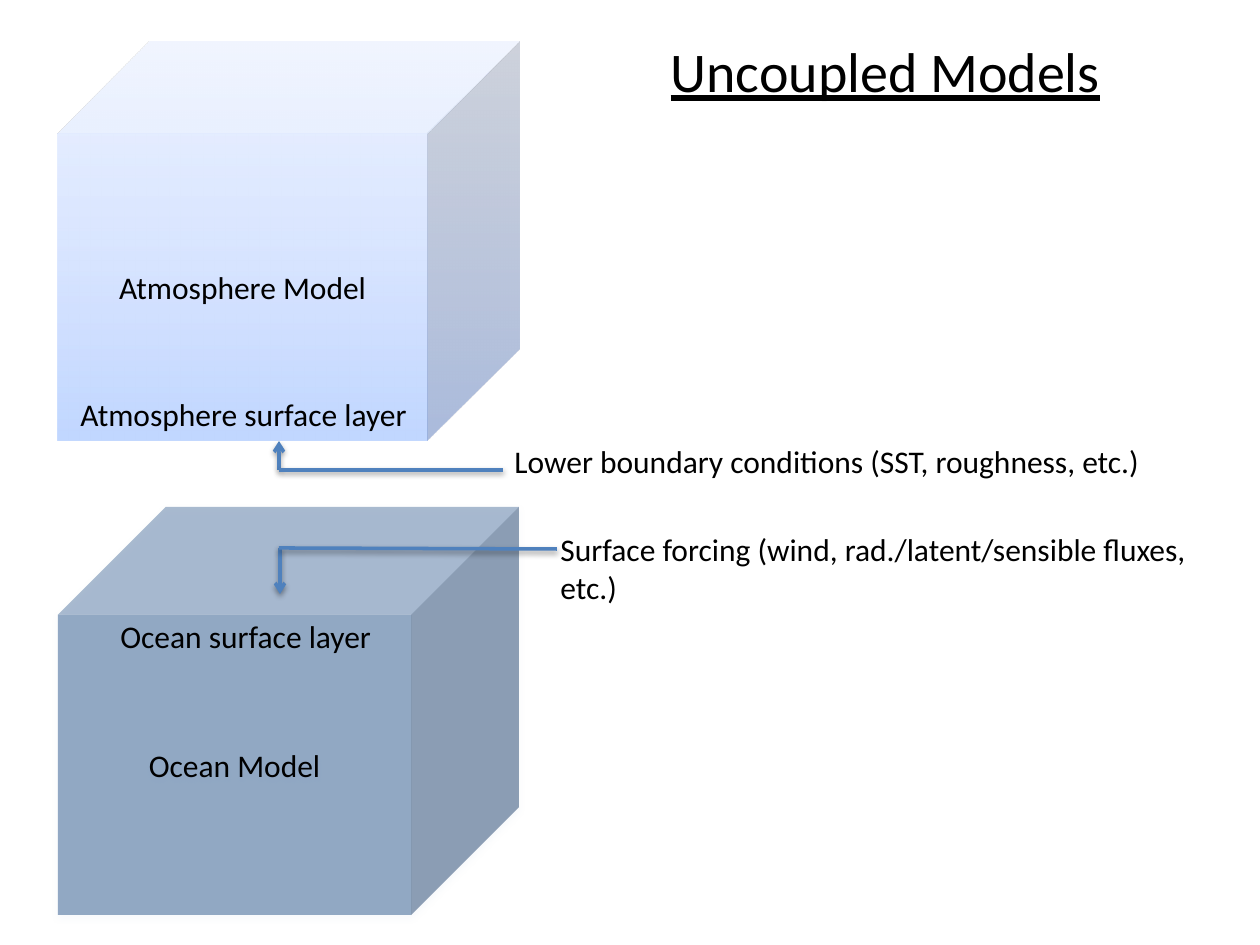
"""Build a slide that contrasts uncoupled atmosphere and ocean models."""
from dataclasses import dataclass

from lxml.etree import SubElement
from pptx import Presentation
from pptx.dml.color import RGBColor
from pptx.enum.shapes import MSO_CONNECTOR as Connector, MSO_SHAPE as Shape
from pptx.enum.text import MSO_ANCHOR as Anchor, MSO_AUTO_SIZE as AutoSize, PP_ALIGN as Align
from pptx.oxml.ns import qn
from pptx.util import Emu, Pt

TITLE_ONLY = 5


@dataclass(frozen=True)
class Theme:
    font: str = "Calibri"
    body_size: int = 18
    title_size: int = 32
    line_width: int = 2
    ink: str = "000000"
    arrow: str = "4F81BD"
    ocean: str = "376092"
    ocean_alpha: int = 53
    ocean_shadow: str = "DCE6F2"
    sky: tuple = ((0, "A4C4FF"), (35, "BFD4FF"), (100, "E6EEFF"))
    sky_alpha: int = 68
    shadow_alpha: int = 38


def px(value):
    return Emu(round(value * 914400 / 126))


def add_node(parent, tag, **attributes):
    return SubElement(parent, qn(tag), {key: str(value) for key, value in attributes.items()})


def add_color(parent, color, alpha):
    node = add_node(parent, "a:srgbClr", val=color)
    add_node(node, "a:alpha", val=alpha * 1000)


def write_text(frame, text, *, font, size, color, align=Align.LEFT, anchor=Anchor.TOP,
               underline=None, grow=True):
    frame.word_wrap = not grow
    frame.auto_size = AutoSize.SHAPE_TO_FIT_TEXT if grow else AutoSize.NONE
    frame.vertical_anchor = anchor
    frame.margin_left = frame.margin_right = Pt(7.2)
    frame.margin_top = frame.margin_bottom = Pt(3.6)
    para = frame.paragraphs[0]
    para.alignment = align
    span = para.add_run()
    span.text = text
    span.font.name, span.font.size = font, Pt(size)
    span.font.color.rgb = RGBColor.from_string(color)
    span.font.underline = underline


class Diagram:
    def __init__(self, page, theme):
        self.page, self.theme = page, theme
        self.style = dict(font=theme.font, size=theme.body_size, color=theme.ink)

    def title(self, text, *bounds):
        box = self.page.shapes.title
        box.left, box.top, box.width, box.height = map(px, bounds)
        write_text(box.text_frame, text, **{**self.style, "size": self.theme.title_size},
                   underline=True)

    def label(self, text, *bounds):
        box = self.page.shapes.add_textbox(*map(px, bounds))
        write_text(box.text_frame, text, **self.style)

    def cube(self, text, bounds, depth, stops, alpha, shadow=None):
        cube = self.page.shapes.add_shape(Shape.CUBE, *map(px, bounds))
        cube.adjustments[0] = depth
        properties = cube.element.spPr
        if len(stops) > 1:
            gradient = add_node(properties, "a:gradFill", rotWithShape=1)
            stop_list = add_node(gradient, "a:gsLst")
            for position, color in stops:
                add_color(add_node(stop_list, "a:gs", pos=position * 1000), color, alpha)
            add_node(gradient, "a:lin", ang=270 * 60000, scaled=1)
        else:
            add_color(add_node(properties, "a:solidFill"), stops[0][1], alpha)
        cube.line.fill.background()
        cube.shadow.inherit = False
        if shadow:
            self.cast_shadow(properties.find(qn("a:effectLst")), shadow)
        write_text(cube.text_frame, text, **self.style, align=Align.CENTER,
                   anchor=Anchor.MIDDLE, grow=False)

    def line(self, start, end, arrow=False):
        line = self.page.shapes.add_connector(Connector.STRAIGHT, *map(px, (*start, *end)))
        line.line.color.rgb = RGBColor.from_string(self.theme.arrow)
        line.line.width = Pt(self.theme.line_width)
        properties = line.element.spPr
        if arrow:
            add_node(properties.find(qn("a:ln")), "a:tailEnd", type="arrow")
        self.cast_shadow(add_node(properties, "a:effectLst"), self.theme.ink)

    def cast_shadow(self, effects, color):
        shadow = add_node(effects, "a:outerShdw", blurRad=40000, dist=20000,
                          dir=90 * 60000, rotWithShape=0)
        add_color(shadow, color, self.theme.shadow_alpha)


def main():
    deck = Presentation()
    deck.slide_width, deck.slide_height = px(1260), px(945)
    theme = Theme()
    diagram = Diagram(deck.slides.add_slide(deck.slide_layouts[TITLE_ONLY]), theme)

    diagram.title("Uncoupled Models", 658, 30, 459, 81)
    diagram.cube("Atmosphere Model", (58, 42, 461, 399), 0.23, theme.sky, theme.sky_alpha)
    diagram.cube("Ocean Model", (58, 507, 461, 408), 0.264, ((0, theme.ocean),),
                 theme.ocean_alpha, theme.ocean_shadow)

    for text, left, top, width in (
        ("Lower boundary conditions (SST, roughness, etc.)", 502, 436, 664),
        ("Ocean surface layer", 108, 611, 278),
        ("Atmosphere surface layer", 68, 389, 355),
        ("Surface forcing (wind, rad./latent/sensible fluxes, etc.)", 548, 524, 712),
    ):
        diagram.label(text, left, top, width, 51)

    diagram.line((280, 548), (280, 594), arrow=True)
    diagram.line((279, 470), (279, 441), arrow=True)
    diagram.line((279, 470), (503, 470))
    diagram.line((279, 548), (557, 549))

    deck.save("out.pptx")


if __name__ == "__main__":
    main()
